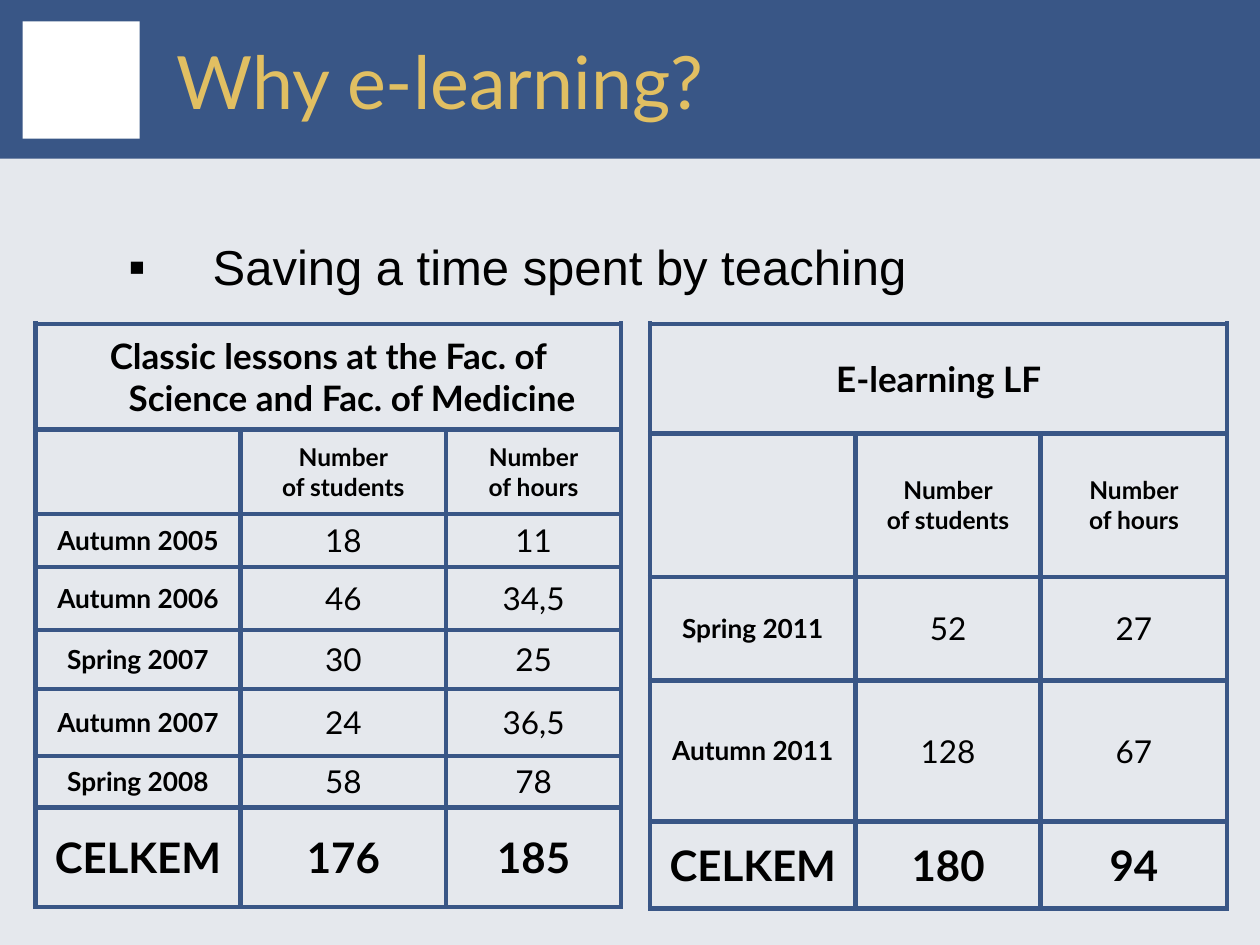
"""Build the "Why e-learning?" slide with two tables of teaching hours."""
from lxml import etree
from pptx import Presentation
from pptx.dml.color import RGBColor
from pptx.enum.shapes import MSO_SHAPE
from pptx.enum.text import MSO_ANCHOR, PP_ALIGN
from pptx.oxml import parse_xml
from pptx.util import Inches, Pt

RECTANGLE = MSO_SHAPE.RECTANGLE
MIDDLE, TOP = MSO_ANCHOR.MIDDLE, MSO_ANCHOR.TOP
LEFT, CENTER = PP_ALIGN.LEFT, PP_ALIGN.CENTER
NAMESPACE = "http://schemas.openxmlformats.org/drawingml/2006/main"
COLORS = {"background": "E5E8ED", "blue": "395686", "white": "FFFFFF",
          "gold": "E1BF62", "black": "000000"}


def write(frame, text, size, color="black", font="Lato", bold=False,
          align=CENTER, anchor=MIDDLE, indent=0, bullet=None):
    frame.word_wrap = True
    frame.vertical_anchor = anchor
    for index, line in enumerate(text.split("\n")):
        paragraph = frame.add_paragraph() if index else frame.paragraphs[0]
        paragraph.alignment = align
        paragraph.space_before = Pt(0)
        properties = paragraph._p.get_or_add_pPr()
        properties.set("marL", str(Inches(indent)))
        properties.set("indent", str(-Inches(indent)))
        if bullet:
            bullet_color = etree.SubElement(properties, f"{{{NAMESPACE}}}buClr")
            etree.SubElement(bullet_color, f"{{{NAMESPACE}}}srgbClr", val=COLORS[color])
            etree.SubElement(properties, f"{{{NAMESPACE}}}buFont", typeface=font)
            etree.SubElement(properties, f"{{{NAMESPACE}}}buChar", char=bullet)
        else:
            etree.SubElement(properties, f"{{{NAMESPACE}}}buNone")
        run = paragraph.add_run()
        run.text = line
        run.font.size = Pt(size)
        run.font.name = font
        run.font.bold = bold
        run.font.color.rgb = RGBColor.from_string(COLORS[color])


def format_cell(cell):
    properties = cell._tc.get_or_add_tcPr()
    for side in ("lnL", "lnR", "lnT", "lnB"):
        properties.append(parse_xml(
            f'<a:{side} xmlns:a="{NAMESPACE}" w="{Pt(3)}"><a:solidFill>'
            f'<a:srgbClr val="{COLORS["blue"]}"/></a:solidFill></a:{side}>'))
    cell.fill.background()


presentation = Presentation()
presentation.slide_width = Inches(10)
presentation.slide_height = Inches(7.5)
slide = presentation.slides.add_slide(presentation.slide_layouts[5])
slide.background.fill.solid()
slide.background.fill.fore_color.rgb = RGBColor.from_string(COLORS["background"])

for left, top, width, height, color in (
        (0, 0, 10, 1.26, "blue"), (0.18, 0.17, 0.93, 0.93, "white")):
    shape = slide.shapes.add_shape(
        RECTANGLE, Inches(left), Inches(top), Inches(width), Inches(height))
    shape.shadow.inherit = False
    shape.fill.solid()
    shape.fill.fore_color.rgb = RGBColor.from_string(COLORS[color])
    shape.line.fill.background()

title = slide.shapes.title
title.left, title.top = Inches(1.3), Inches(0.17)
title.width, title.height = Inches(8.2), Inches(0.93)
write(title.text_frame, "Why e-learning?", 42, color="gold", align=LEFT)
slide.shapes.element.append(title.element)

column_labels = ("", "Number\nof students", "Number\nof hours")
tables = (
    {"left": 0.28, "columns": (1.63, 1.63, 1.39),
     "heights": (0.84, 0.67, 0.42, 0.5, 0.47, 0.53, 0.41, 0.79),
     "rows": (("Classic lessons at the Fac. of Science and Fac. of Medicine", "", ""),
              column_labels,
              ("Autumn 2005", "18", "11"),
              ("Autumn 2006", "46", "34,5"),
              ("Spring 2007", "30", "25"),
              ("Autumn 2007", "24", "36,5"),
              ("Spring 2008", "58", "78"),
              ("CELKEM", "176", "185"))},
    {"left": 5.16, "columns": (1.63, 1.47, 1.48),
     "heights": (0.87, 1.14, 0.82, 1.12, 0.69),
     "rows": (("E-learning LF", "", ""),
              column_labels,
              ("Spring 2011", "52", "27"),
              ("Autumn 2011", "128", "67"),
              ("CELKEM", "180", "94"))},
)

for data in tables:
    rows = data["rows"]
    table = slide.shapes.add_table(
        len(rows), 3, Inches(data["left"]), Inches(2.57),
        Inches(sum(data["columns"])), Inches(sum(data["heights"]))).table
    table.first_row = table.horz_banding = False
    for column, width in zip(table.columns, data["columns"]):
        column.width = Inches(width)
    for row, height in zip(table.rows, data["heights"]):
        row.height = Inches(height)
    table.cell(0, 0).merge(table.cell(0, 2))
    special_sizes = {0: 20, 1: 14, len(rows) - 1: 24}
    for row_index, texts in enumerate(rows):
        for column_index, text in enumerate(texts):
            cell = table.cell(row_index, column_index)
            format_cell(cell)
            if text:
                size = special_sizes.get(row_index, 18 if column_index else 15)
                write(cell.text_frame, text, size, bold=size != 18, indent=0.38)
                cell.vertical_anchor = MIDDLE

point = slide.shapes.add_textbox(Inches(0.92), Inches(1.83), Inches(8.8), Inches(0.58))
write(point.text_frame, "Saving a time spent by teaching", 28, font="Arial",
      align=LEFT, anchor=TOP, indent=0.67, bullet="▪")

presentation.save("out.pptx")
